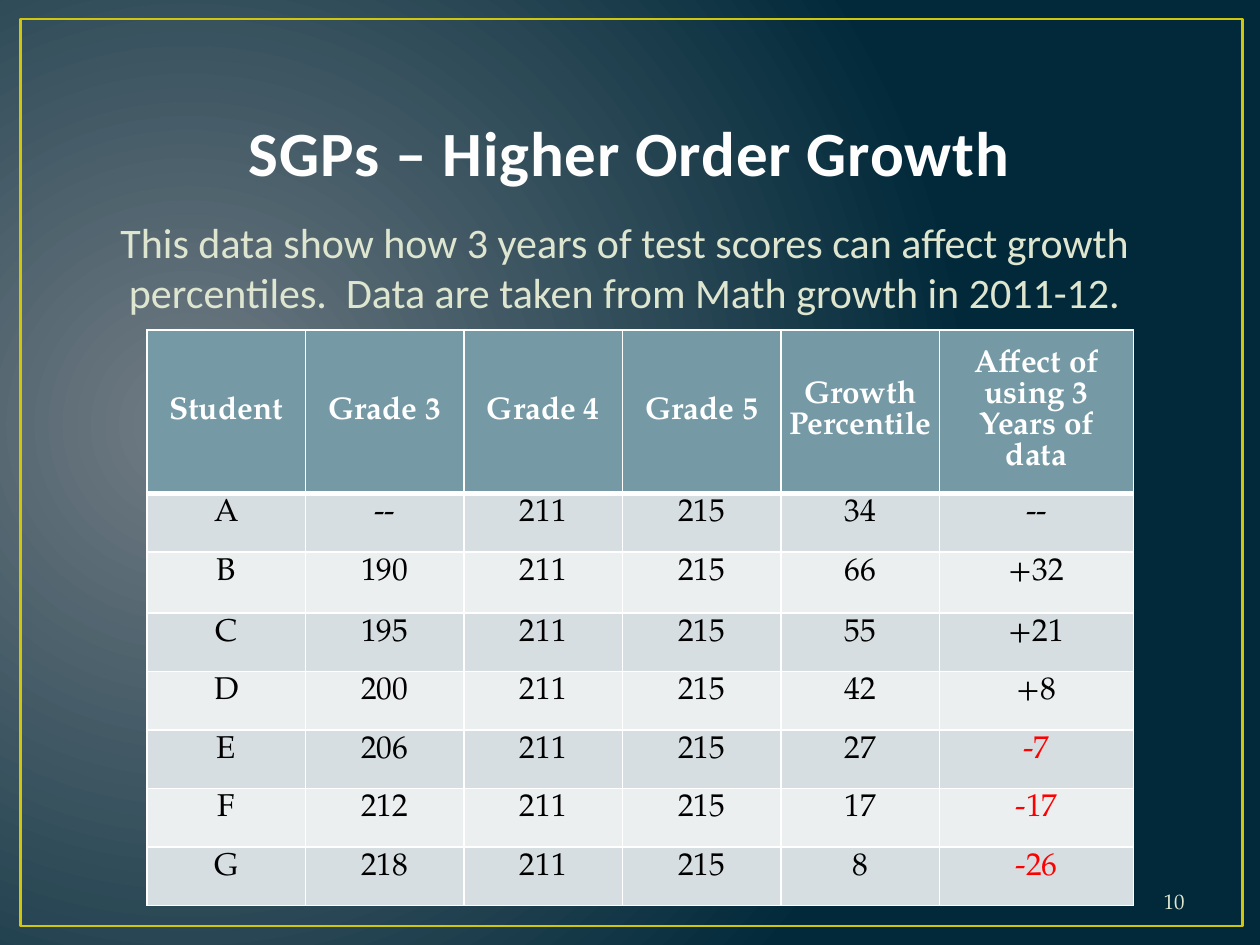
"""Build the slide on student growth percentiles with its table of test scores."""
from dataclasses import dataclass

from lxml.etree import SubElement
from pptx import Presentation
from pptx.dml.color import RGBColor
from pptx.enum.shapes import MSO_SHAPE
from pptx.enum.text import MSO_ANCHOR, MSO_AUTO_SIZE, PP_ALIGN
from pptx.oxml import parse_xml
from pptx.oxml.ns import nsdecls, qn
from pptx.util import Pt


@dataclass(frozen=True)
class Theme:
    heading_font: str = "Calibri"
    body_font: str = "TeX Gyre Pagella"
    title_size: float = 36
    subtitle_size: float = 24
    table_size: float = 18
    table_leading: float = 17.7
    number_size: float = 12
    title: str = "FEFEFE"
    title_outline: str = "384F55"
    soft_text: str = "DFE6D0"
    frame: str = "CFC60D"
    glow: str = "717C84"
    backdrop: str = "01293A"
    grid: str = "FFFFFF"
    header_fill: str = "759AA5"
    header_text: str = "FFFFFF"
    bands: tuple = ("D6DEE1", "ECEFF0")
    cell_text: str = "000000"
    negative: str = "FF0000"


@dataclass(frozen=True)
class Box:
    left: float
    top: float
    width: float
    height: float

    def lengths(self) -> tuple:
        return Pt(self.left), Pt(self.top), Pt(self.width), Pt(self.height)


@dataclass(frozen=True)
class TextStyle:
    font: str
    size: float
    color: str
    bold: bool = False
    align: PP_ALIGN = PP_ALIGN.CENTER


@dataclass(frozen=True)
class Student:
    name: str
    grade_3: str
    percentile: str
    effect: str

    def row(self) -> tuple:
        return self.name, self.grade_3, "211", "215", self.percentile, self.effect


THEME = Theme()
HEADERS = ("Student", "Grade 3", "Grade 4", "Grade 5", "Growth Percentile",
           "Affect of using 3 Years of data")
STUDENTS = (
    Student("A", "--", "34", "--"),
    Student("B", "190", "66", "+32"),
    Student("C", "195", "55", "+21"),
    Student("D", "200", "42", "+8"),
    Student("E", "206", "27", "-7"),
    Student("F", "212", "17", "-17"),
    Student("G", "218", "8", "-26"),
)
COLUMN_WIDTHS = (90.6,) * 5 + (110.8,)
ROW_HEIGHTS = (93.4, 33.4, 35) + (33.4,) * 5


def write(text_frame, text: str, style: TextStyle) -> None:
    """Set the text of a frame and format its paragraph and run."""
    text_frame.text = text
    paragraph = text_frame.paragraphs[0]
    paragraph.alignment = style.align
    font = paragraph.runs[0].font
    font.name, font.size, font.bold = style.font, Pt(style.size), style.bold
    font.color.rgb = RGBColor.from_string(style.color)


def paint_background(slide) -> None:
    """Fill the slide with a radial glow at its left."""
    slide.background.fill.solid()
    properties = slide.background._cSld.bg.bgPr
    stops = "".join(
        f'<a:gs pos="{position}"><a:srgbClr val="{color}"/></a:gs>'
        for position, color in ((0, THEME.glow), (100000, THEME.backdrop)))
    gradient = parse_xml(
        f'<a:gradFill {nsdecls("a")} rotWithShape="1"><a:gsLst>{stops}</a:gsLst>'
        '<a:path path="circle">'
        '<a:fillToRect l="15000" t="50000" r="85000" b="60000"/>'
        '</a:path></a:gradFill>')
    properties.replace(properties.find(qn("a:solidFill")), gradient)


def add_frame(slide, box: Box) -> None:
    """Draw the thin frame around the slide."""
    shape = slide.shapes.add_shape(MSO_SHAPE.RECTANGLE, *box.lengths())
    shape.shadow.inherit = False
    shape.fill.background()
    shape.line.color.rgb = RGBColor.from_string(THEME.frame)
    shape.line.width = Pt(1.5)


def format_title(slide, text: str, box: Box) -> None:
    """Place the title and give it letter spacing and an outline."""
    title = slide.shapes.title
    title.left, title.top, title.width, title.height = box.lengths()
    text_frame = title.text_frame
    text_frame.auto_size = MSO_AUTO_SIZE.NONE
    text_frame.vertical_anchor = MSO_ANCHOR.BOTTOM
    write(text_frame, text,
          TextStyle(THEME.heading_font, THEME.title_size, THEME.title, True))
    properties = text_frame.paragraphs[0].runs[0].font._element
    properties.set("spc", "50")
    properties.insert(0, parse_xml(
        f'<a:ln {nsdecls("a")} w="{Pt(1.05)}"><a:solidFill>'
        f'<a:srgbClr val="{THEME.title_outline}"/></a:solidFill></a:ln>'))


def add_text(slide, text: str, box: Box, style: TextStyle,
             anchor: MSO_ANCHOR = MSO_ANCHOR.TOP) -> None:
    """Add a wrapping text box."""
    text_frame = slide.shapes.add_textbox(*box.lengths()).text_frame
    text_frame.word_wrap = True
    text_frame.vertical_anchor = anchor
    write(text_frame, text, style)


def add_border(cell, side: str, width: float) -> None:
    """Draw one border of a cell."""
    line = SubElement(cell._tc.get_or_add_tcPr(), qn(f"a:{side}"), w=str(Pt(width)))
    SubElement(SubElement(line, qn("a:solidFill")), qn("a:srgbClr"), val=THEME.grid)


def format_cell(cell, text: str, row: int) -> None:
    """Write and style one cell according to its row."""
    header = row == 0
    negative = text.startswith("-") and text != "--"
    cell.margin_left = cell.margin_right = Pt(3.6)
    cell.margin_top = cell.margin_bottom = Pt(3.6)
    cell.vertical_anchor = MSO_ANCHOR.MIDDLE if header else MSO_ANCHOR.TOP
    color = THEME.negative if negative else THEME.cell_text
    write(cell.text_frame, text,
          TextStyle(THEME.body_font, THEME.table_size,
                    THEME.header_text if header else color, header))
    cell.text_frame.paragraphs[0].line_spacing = Pt(THEME.table_leading)
    widths = {"lnL": 1, "lnR": 1, "lnT": 3 if row == 1 else 1, "lnB": 3 if header else 1}
    for side, width in widths.items():
        add_border(cell, side, width)
    cell.fill.solid()
    fill = THEME.header_fill if header else THEME.bands[(row - 1) % 2]
    cell.fill.fore_color.rgb = RGBColor.from_string(fill)


def add_score_table(slide, left: float, top: float) -> None:
    """Add the table of scores and growth percentiles."""
    rows = [HEADERS] + [student.row() for student in STUDENTS]
    box = Box(left, top, sum(COLUMN_WIDTHS), sum(ROW_HEIGHTS))
    table = slide.shapes.add_table(len(rows), len(HEADERS), *box.lengths()).table
    for column, width in zip(table.columns, COLUMN_WIDTHS):
        column.width = Pt(width)
    for row, height in zip(table.rows, ROW_HEIGHTS):
        row.height = Pt(height)
    for row_index, texts in enumerate(rows):
        for column_index, text in enumerate(texts):
            format_cell(table.cell(row_index, column_index), text, row_index)


def main() -> None:
    """Build and save the presentation."""
    presentation = Presentation()
    presentation.slide_width, presentation.slide_height = Pt(720), Pt(540)
    slide = presentation.slides.add_slide(presentation.slide_layouts[5])
    paint_background(slide)
    add_frame(slide, Box(11.7, 10.8, 698.4, 518.4))
    format_title(slide, "SGPs – Higher Order Growth", Box(36, 21.6, 648, 90))
    add_text(slide, "10", Box(624, 500.5, 60, 28.8),
             TextStyle(THEME.body_font, THEME.number_size, THEME.soft_text,
                       align=PP_ALIGN.RIGHT), MSO_ANCHOR.MIDDLE)
    add_score_table(slide, 84, 188.6)
    add_text(slide, "This data show how 3 years of test scores can affect growth "
             "percentiles.  Data are taken from Math growth in 2011-12.",
             Box(60, 120, 594, 65.5),
             TextStyle(THEME.heading_font, THEME.subtitle_size, THEME.soft_text))
    presentation.save("out.pptx")


if __name__ == "__main__":
    main()
